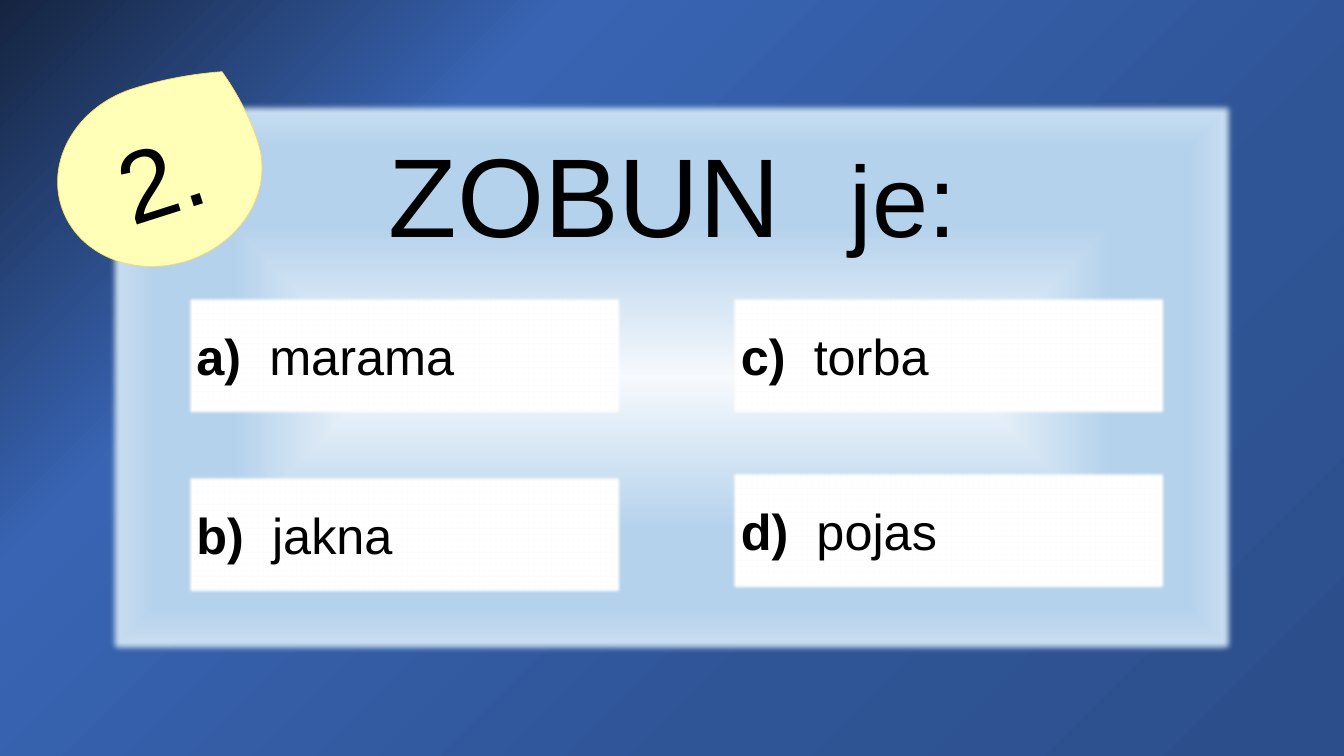
from lxml import etree
from pptx import Presentation
from pptx.dml.color import RGBColor
from pptx.enum.shapes import MSO_SHAPE
from pptx.enum.text import MSO_ANCHOR, PP_ALIGN
from pptx.oxml import parse_xml
from pptx.oxml.ns import nsdecls, qn
from pptx.util import Inches, Pt

RECTANGLE, TEARDROP = MSO_SHAPE.RECTANGLE, MSO_SHAPE.TEAR
TOP, MIDDLE = MSO_ANCHOR.TOP, MSO_ANCHOR.MIDDLE
LEFT, CENTER = PP_ALIGN.LEFT, PP_ALIGN.CENTER
BLACK = RGBColor(0x00, 0x00, 0x00)
WHITE = RGBColor(0xFF, 0xFF, 0xFF)
YELLOW = RGBColor(0xFF, 0xFF, 0xB7)
GOLD = RGBColor(0xFF, 0xD9, 0x66)
BACKGROUND_STOPS = [
    (0, RGBColor(0x15, 0x24, 0x3F)), (27, RGBColor(0x38, 0x64, 0xB3)),
    (69, RGBColor(0x2F, 0x55, 0x97)), (97, RGBColor(0x2C, 0x4F, 0x8C))]
PANEL_STOPS = [
    (0, RGBColor(0xF7, 0xFA, 0xFD)), (54, RGBColor(0xB5, 0xD2, 0xEC)),
    (83, RGBColor(0xB5, 0xD2, 0xEC)), (100, RGBColor(0xCE, 0xE1, 0xF2))]
DIAGONAL = '<a:lin ang="2700000" scaled="0"/>'
FROM_CENTER = ('<a:path path="shape"><a:fillToRect l="50000" t="50000" '
               'r="50000" b="50000"/></a:path>')


def set_gradient(fill, parent, stops, direction):
    """Give the fill, held somewhere under parent, several colour stops."""
    fill.solid()
    solid = next(parent.iter(qn("a:solidFill")))
    stop_xml = "".join(
        f'<a:gs pos="{percent * 1000}"><a:srgbClr val="{color}"/></a:gs>'
        for percent, color in stops)
    gradient = parse_xml(
        f'<a:gradFill {nsdecls("a")} rotWithShape="1">'
        f'<a:gsLst>{stop_xml}</a:gsLst>{direction}</a:gradFill>')
    solid.getparent().replace(solid, gradient)


def soften_edges(shape, radius):
    shape.line.fill.background()
    shape.shadow.inherit = False
    effects = shape.element.spPr.find(qn("a:effectLst"))
    etree.SubElement(effects, qn("a:softEdge"), rad=str(radius))


deck = Presentation()
deck.slide_width, deck.slide_height = Inches(13.33), Inches(7.5)
page = deck.slides.add_slide(deck.slide_layouts[5])
set_gradient(page.background.fill, page.element, BACKGROUND_STOPS, DIAGONAL)

# Panel with the question as the slide title in front of it
panel = page.shapes.add_shape(
    RECTANGLE, Inches(1.07), Inches(1), Inches(11.2), Inches(5.5))
set_gradient(panel.fill, panel.element.spPr, PANEL_STOPS, FROM_CENTER)
soften_edges(panel, Pt(5))

title = page.shapes.title
title.left, title.top = Inches(1.07), Inches(1.13)
title.width, title.height = Inches(11.2), Inches(1.45)
panel.element.addnext(title.element)
frame = title.text_frame
frame.vertical_anchor = TOP
frame.margin_top = frame.margin_bottom = 0
para = frame.paragraphs[0]
para.alignment = CENTER
para.font.name, para.font.color.rgb = "Arial", BLACK
for text, size in [("ZOBUN", 80), ("  ", 88), ("je:", 72)]:
    span = para.add_run()
    span.text, span.font.size = text, Pt(size)

# Answer boxes
answers = [("a)", "marama", 1.85, 2.93), ("c)", "torba", 7.25, 2.93),
           ("b)", "jakna", 1.85, 4.71), ("d)", "pojas", 7.25, 4.67)]
for letter, word, left, top in answers:
    box = page.shapes.add_shape(
        RECTANGLE, Inches(left), Inches(top), Inches(4.32), Inches(1.19))
    box.fill.solid()
    box.fill.fore_color.rgb = WHITE
    soften_edges(box, Pt(2.5))
    box.text_frame.vertical_anchor = MIDDLE
    para = box.text_frame.paragraphs[0]
    para.alignment = LEFT
    para.font.name, para.font.size = "Arial", Pt(36)
    para.font.color.rgb = BLACK
    for text, bold in [(f"{letter}  ", True), (word, False)]:
        span = para.add_run()
        span.text, span.font.bold = text, bold

# Question number
badge = page.shapes.add_shape(
    TEARDROP, Inches(0.56), Inches(0.84), Inches(2.05), Inches(1.79))
badge.adjustments[0] = 0.878
badge.rotation = 342.2
badge.shadow.inherit = False
badge.fill.solid()
badge.fill.fore_color.rgb = YELLOW
badge.line.color.rgb = GOLD
badge.line.width = Pt(0.5)
badge.text_frame.vertical_anchor = MIDDLE
para = badge.text_frame.paragraphs[0]
para.text, para.alignment = "2.", CENTER
para.font.name, para.font.size = "Arial", Pt(72)
para.font.color.rgb = BLACK

deck.save("out.pptx")
